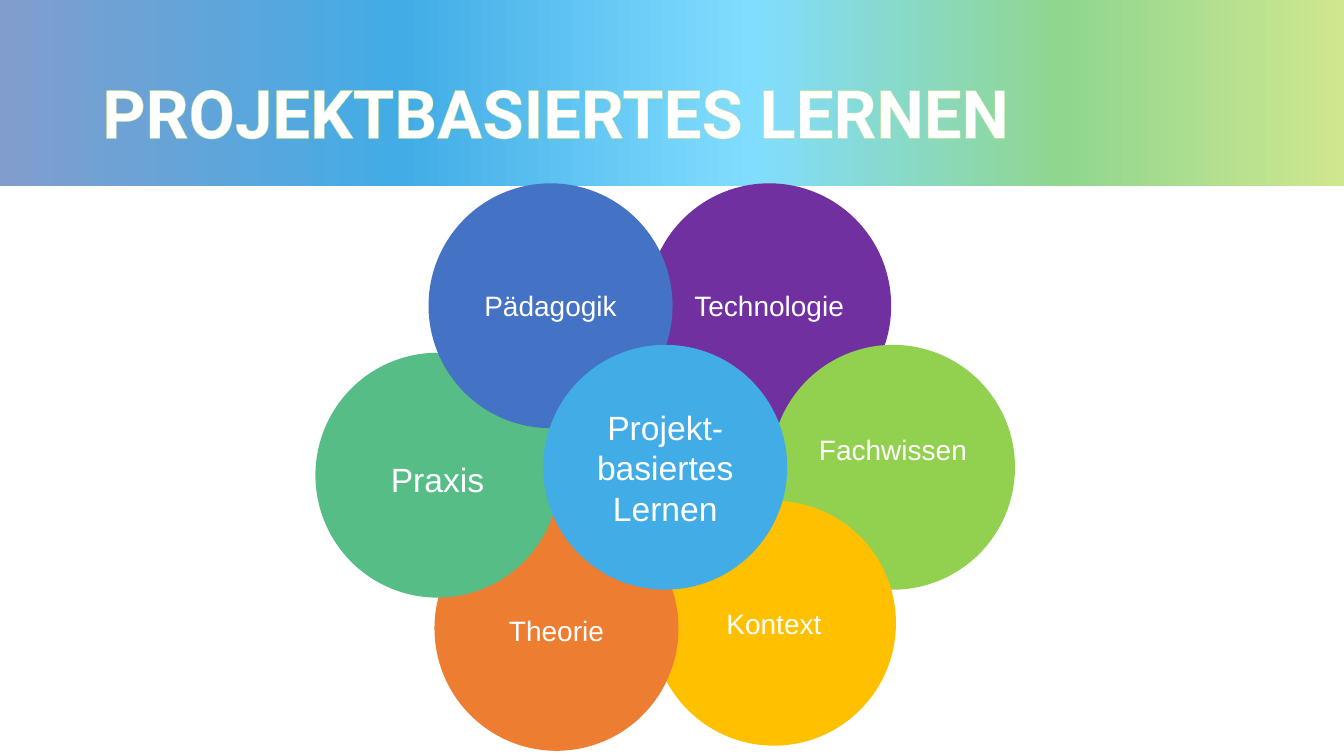
"""Builds a slide with a title band and a flower of overlapping topic circles."""
from lxml.etree import SubElement
from pptx import Presentation
from pptx.dml.color import RGBColor
from pptx.enum.shapes import MSO_SHAPE
from pptx.enum.text import MSO_ANCHOR, PP_ALIGN
from pptx.oxml.ns import qn
from pptx.util import Cm, Pt

WHITE = "FFFFFF"
BAND_STOPS = [(0, "819DCD"), (30, "42ACE6"), (56, "81DDFF"), (79, "90D68F"), (100, "CFE78F")]
CIRCLE_WIDTH, CIRCLE_HEIGHT = 6.15, 6.17
LABEL_WIDTH, LABEL_HEIGHT, CENTRE_HEIGHT = 4.9, 1.12, 3.33
TOPICS = [
    ("Technologie", 16.31, 4.62, "7030A0", 20, LABEL_HEIGHT, 0),
    ("Fachwissen", 19.43, 8.69, "92D050", 20, LABEL_HEIGHT, -0.45),
    ("Kontext", 16.43, 12.62, "FFC000", 20, LABEL_HEIGHT, 0),
    ("Theorie", 10.95, 12.75, "ED7D31", 20, LABEL_HEIGHT, 0.05),
    ("Praxis", 7.95, 8.89, "57BD87", 24, LABEL_HEIGHT, 0.09),
    ("Pädagogik", 10.8, 4.62, "4472C4", 20, LABEL_HEIGHT, 0),
    ("Projekt-basiertes Lernen", 13.69, 8.69, "42ACE6", 24, CENTRE_HEIGHT, 0),
]


def color(hex_string):
    """Turn a hex string into a colour."""
    return RGBColor.from_string(hex_string)


def add_plain_shape(shapes, kind, left, top, width, height):
    """Add a preset shape without line or shadow, measured in centimetres."""
    shape = shapes.add_shape(kind, Cm(left), Cm(top), Cm(width), Cm(height))
    shape.shadow.inherit = False
    shape.line.fill.background()
    return shape


def add_text(shapes, text, left, top, width, height, font_name, size):
    """Add a wrapped, vertically centred white text and return its paragraph."""
    box = shapes.add_textbox(Cm(left), Cm(top), Cm(width), Cm(height))
    frame = box.text_frame
    frame.word_wrap = True
    frame.vertical_anchor = MSO_ANCHOR.MIDDLE
    para = frame.paragraphs[0]
    para.text = text
    para.font.name = font_name
    para.font.size = Pt(size)
    para.font.color.rgb = color(WHITE)
    return para


def fill_with_stops(shape, stops):
    """Fill a shape with a left-to-right gradient through the given stops."""
    shape.fill.gradient()
    shape.fill.gradient_angle = 0
    stop_list = shape.fill._fill._gradFill.find(qn("a:gsLst"))
    for old_stop in list(stop_list):
        stop_list.remove(old_stop)
    for percent, hex_string in stops:
        stop = SubElement(stop_list, qn("a:gs"), pos=str(percent * 1000))
        SubElement(stop, qn("a:srgbClr"), val=hex_string)


def outline_text(span, hex_string, width):
    """Draw a thin outline around the letters of a run."""
    properties = span.font._element if hasattr(span.font, "_element") else span._r.get_or_add_rPr()
    line = SubElement(properties, qn("a:ln"), w=str(Pt(width)))
    properties.insert(0, line)
    fill = SubElement(line, qn("a:solidFill"))
    SubElement(fill, qn("a:srgbClr"), val=hex_string)


def add_title_band(page, left, top, width, height):
    """Place the gradient band and the title on it."""
    band = add_plain_shape(page.shapes, MSO_SHAPE.RECTANGLE, left, top, width, height)
    fill_with_stops(band, BAND_STOPS)
    title = add_text(page.shapes, "PROJEKTBASIERTES LERNEN", left + 2.33, top + 1.02,
                     29.21, 4.24, "Roboto", 48)
    title.line_spacing = 0.9
    title.font.bold = True
    outline_text(title.runs[0], "BFE38F", 0.75)


def add_topic(page, text, left, top, fill, size, label_height, label_shift):
    """Place one circle with its label around the circle's centre."""
    group = page.shapes.add_group_shape()
    circle = add_plain_shape(group.shapes, MSO_SHAPE.OVAL, left, top, CIRCLE_WIDTH, CIRCLE_HEIGHT)
    circle.fill.solid()
    circle.fill.fore_color.rgb = color(fill)
    label_left = left + (CIRCLE_WIDTH - LABEL_WIDTH) / 2
    label_top = top + (CIRCLE_HEIGHT - label_height) / 2 + label_shift
    label = add_text(group.shapes, text, label_left, label_top, LABEL_WIDTH, label_height,
                     "Arial", size)
    label.alignment = PP_ALIGN.CENTER


def main():
    """Build the deck and save it."""
    deck = Presentation()
    deck.slide_width, deck.slide_height = Cm(33.87), Cm(19.05)
    page = deck.slides.add_slide(deck.slide_layouts[6])
    add_title_band(page, 0, -0.2, 33.87, 4.88)
    for topic in TOPICS:
        add_topic(page, *topic)
    deck.save("out.pptx")


if __name__ == "__main__":
    main()
